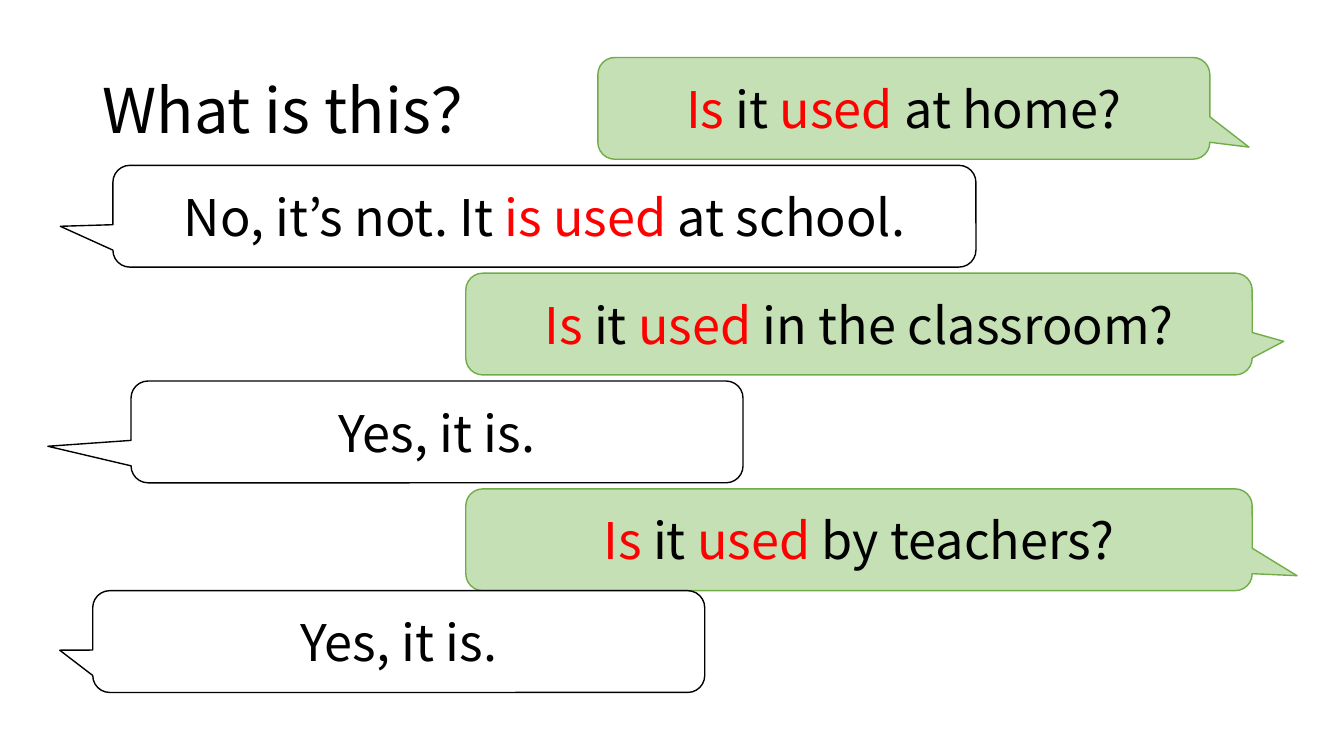
"""Build a slide where a guessing dialogue practises passive questions."""
from typing import NamedTuple

from pptx import Presentation
from pptx.dml.color import RGBColor
from pptx.enum.shapes import MSO_SHAPE
from pptx.enum.text import MSO_ANCHOR, PP_ALIGN
from pptx.oxml.ns import qn
from pptx.slide import Slide
from pptx.text.text import _Paragraph
from pptx.util import Inches, Pt

CALLOUT = MSO_SHAPE.ROUNDED_RECTANGULAR_CALLOUT
MIDDLE = MSO_ANCHOR.MIDDLE
CENTER = PP_ALIGN.CENTER

BLACK = RGBColor(0x00, 0x00, 0x00)
WHITE = RGBColor(0xFF, 0xFF, 0xFF)
RED = RGBColor(0xFF, 0x00, 0x00)
PALE_GREEN = RGBColor(0xC5, 0xE0, 0xB4)
GREEN = RGBColor(0x70, 0xAD, 0x47)

FONT = "Noto Sans CJK JP"
BUBBLE_HEIGHT = 1.01
CORNER = 0.167


class Phrase(NamedTuple):
    text: str
    color: RGBColor = BLACK


class Speaker(NamedTuple):
    fill: RGBColor
    line: RGBColor


class Bubble(NamedTuple):
    speaker: Speaker
    left: float
    top: float
    width: float
    tail: tuple[float, float]
    phrases: list[Phrase]


def question(place: str) -> list[Phrase]:
    return [Phrase("Is", RED), Phrase(" it "), Phrase("used", RED), Phrase(f" {place}?")]


GUESSER = Speaker(PALE_GREEN, GREEN)
ANSWERER = Speaker(WHITE, BLACK)
YES = [Phrase("Yes, it is.")]
NO = [Phrase("No, it’s not. It "), Phrase("is used ", RED), Phrase("at school.")]

BUBBLES = [
    Bubble(GUESSER, 5.93, 0.57, 6.07, (0.564, 0.381), question("at home")),
    Bubble(GUESSER, 4.62, 2.71, 7.8, (0.54, 0.17), question("in the classroom")),
    Bubble(GUESSER, 4.62, 4.85, 7.8, (0.557, 0.353), question("by teachers")),
    Bubble(ANSWERER, 1.12, 1.64, 8.56, (-0.561, 0.099), NO),
    Bubble(ANSWERER, 1.3, 3.78, 6.07, (-0.636, 0.141), YES),
    Bubble(ANSWERER, 0.92, 5.86, 6.07, (-0.554, 0.085), YES),
]


def add_phrase(paragraph: _Paragraph, phrase: Phrase, size: int) -> None:
    run = paragraph.add_run()
    run.text = phrase.text
    run.font.size = Pt(size)
    run.font.name = FONT
    run.font.color.rgb = phrase.color
    east_asian = run.font._element.makeelement(qn("a:ea"), {"typeface": FONT})
    run.font._element.find(qn("a:latin")).addnext(east_asian)


def add_heading(slide: Slide) -> None:
    heading = slide.shapes.add_textbox(Inches(0.92), Inches(0.4), Inches(11.5), Inches(1.45))
    frame = heading.text_frame
    frame.word_wrap = True
    frame.vertical_anchor = MIDDLE
    frame.paragraphs[0].line_spacing = 0.9
    add_phrase(frame.paragraphs[0], Phrase("What is this？"), 44)


def add_bubble(slide: Slide, bubble: Bubble) -> None:
    callout = slide.shapes.add_shape(
        CALLOUT, Inches(bubble.left), Inches(bubble.top),
        Inches(bubble.width), Inches(BUBBLE_HEIGHT))
    for index, value in enumerate((*bubble.tail, CORNER)):
        callout.adjustments[index] = value
    callout.shadow.inherit = False
    callout.fill.solid()
    callout.fill.fore_color.rgb = bubble.speaker.fill
    callout.line.color.rgb = bubble.speaker.line
    callout.line.width = Pt(1)
    frame = callout.text_frame
    frame.word_wrap = True
    frame.vertical_anchor = MIDDLE
    frame.paragraphs[0].alignment = CENTER
    for phrase in bubble.phrases:
        add_phrase(frame.paragraphs[0], phrase, 36)


def main() -> None:
    presentation = Presentation()
    presentation.slide_width = Inches(13.33)
    presentation.slide_height = Inches(7.5)
    slide = presentation.slides.add_slide(presentation.slide_layouts[6])
    add_heading(slide)
    for bubble in BUBBLES:
        add_bubble(slide, bubble)
    presentation.save("out.pptx")


if __name__ == "__main__":
    main()
